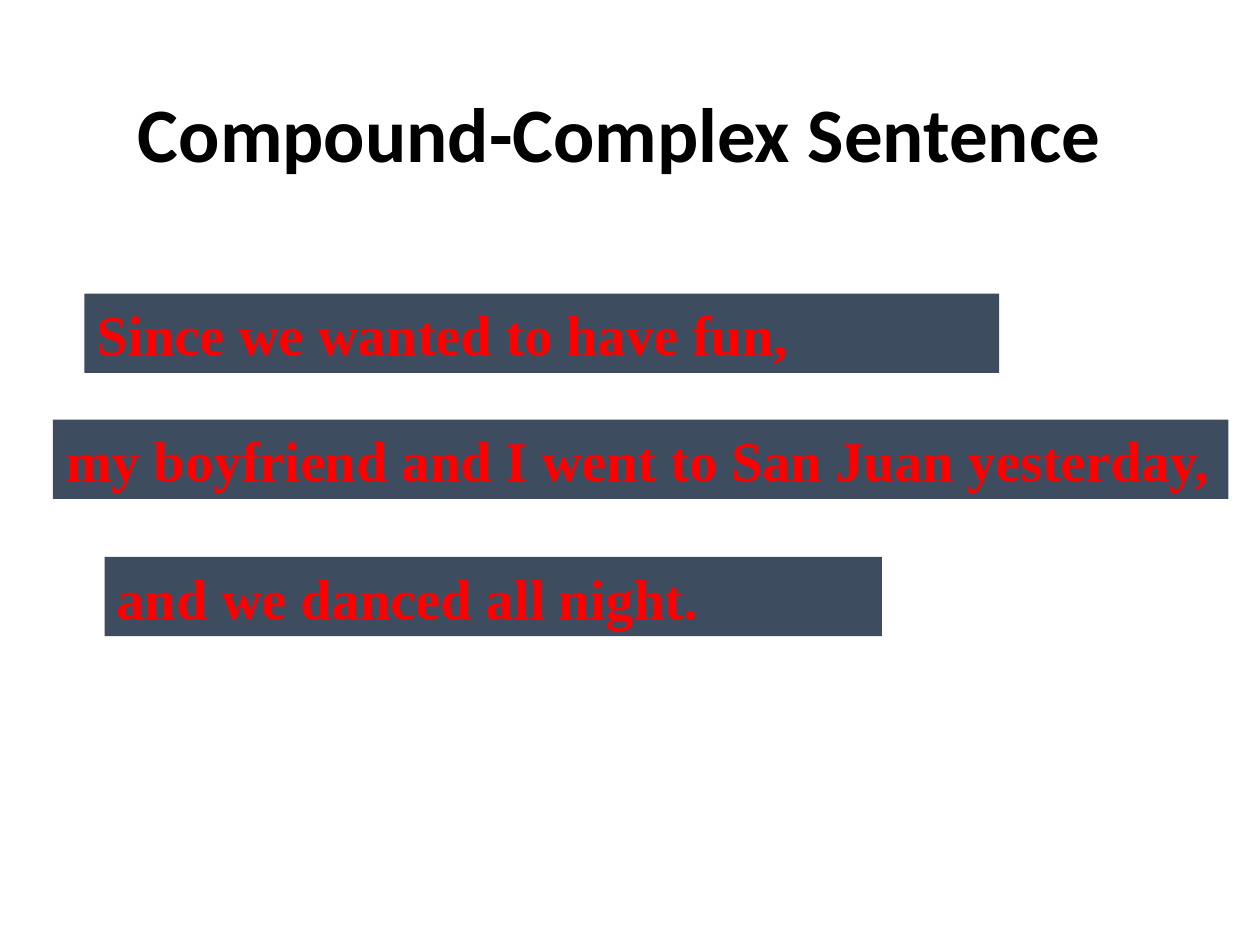
"""Build a slide that splits a compound-complex sentence into its clauses."""
from typing import NamedTuple

from pptx import Presentation
from pptx.dml.color import RGBColor
from pptx.enum.shapes import MSO_SHAPE as Shape
from pptx.enum.text import MSO_ANCHOR as Anchor, PP_ALIGN as Align
from pptx.util import Inches, Pt

BLACK = RGBColor(0x00, 0x00, 0x00)
RED = RGBColor(0xFF, 0x00, 0x00)
SLATE = RGBColor(0x3D, 0x4C, 0x5F)
BAR_HEIGHT = 0.63


class Clause(NamedTuple):
    text: str
    left: float
    top: float
    width: float


CLAUSES = (
    Clause("Since we wanted to have fun,", 0.67, 2.33, 7.26),
    Clause("my boyfriend and I went to San Juan yesterday,", 0.42, 3.33, 9.33),
    Clause("and we danced all night.", 0.83, 4.42, 6.17),
)


def write(shape, text: str, *, font: str, size: int, color: RGBColor,
          align=Align.LEFT, anchor=Anchor.TOP) -> None:
    frame = shape.text_frame
    frame.word_wrap = True
    frame.vertical_anchor = anchor
    para = frame.paragraphs[0]
    para.alignment = align
    run = para.add_run()
    run.text = text
    run.font.name = font
    run.font.size = Pt(size)
    run.font.bold = True
    run.font.color.rgb = color


def draw_title(slide, text: str) -> None:
    box = slide.shapes.add_textbox(Inches(0.67), Inches(0.42), Inches(8.5), Inches(1.25))
    write(box, text, font="Calibri", size=44, color=BLACK,
          align=Align.CENTER, anchor=Anchor.MIDDLE)


def draw_clause(slide, clause: Clause) -> None:
    bar = slide.shapes.add_shape(
        Shape.RECTANGLE, Inches(clause.left), Inches(clause.top),
        Inches(clause.width), Inches(BAR_HEIGHT))
    bar.shadow.inherit = False
    bar.fill.solid()
    bar.fill.fore_color.rgb = SLATE
    bar.line.fill.background()
    write(bar, clause.text, font="Times New Roman", size=32, color=RED)


def main() -> None:
    deck = Presentation()
    deck.slide_width, deck.slide_height = Inches(10), Inches(7.5)
    slide = deck.slides.add_slide(deck.slide_layouts[6])
    draw_title(slide, "Compound-Complex Sentence")
    for clause in CLAUSES:
        draw_clause(slide, clause)
    deck.save("out.pptx")


if __name__ == "__main__":
    main()
